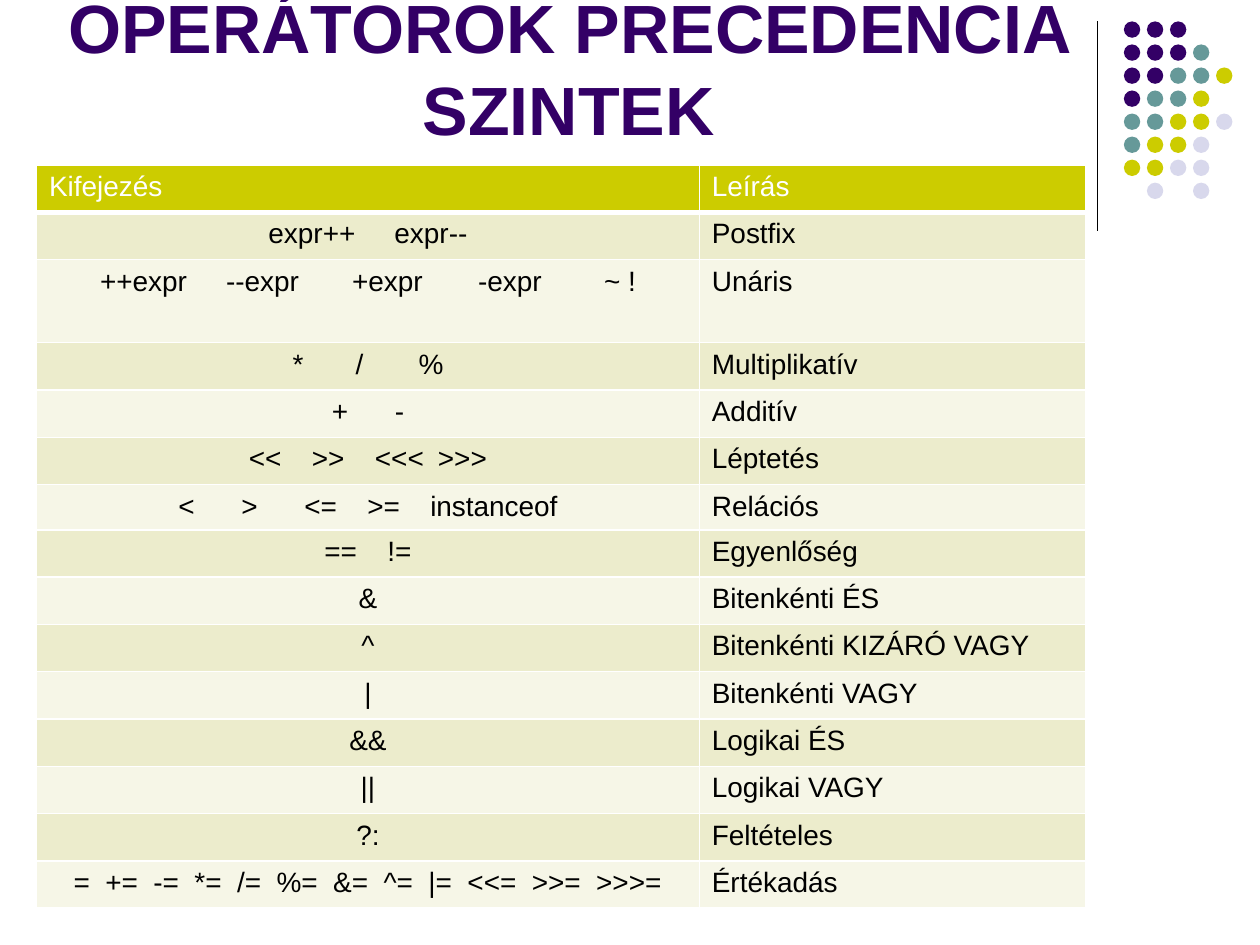
from lxml.etree import SubElement
from pptx import Presentation
from pptx.dml.color import RGBColor
from pptx.enum.shapes import MSO_CONNECTOR, MSO_SHAPE
from pptx.enum.text import MSO_ANCHOR, MSO_AUTO_SIZE, PP_ALIGN
from pptx.oxml.ns import qn
from pptx.util import Inches, Pt

FONT = "Arial"
PURPLE, TEAL, LIME, LAVENDER = "330066", "669999", "CCCC00", "D8D8EC"
WHITE, BLACK = "FFFFFF", "000000"
BANDS = ["ECECCC", "F6F6E7"]

TITLE = "OPERÁTOROK PRECEDENCIA SZINTEK"
HEADER = ("Kifejezés", "Leírás")
LEVELS = [
    ("expr++\texpr--", "Postfix"),
    ("++expr\t--expr\t+expr\t-expr\t~ !", "Unáris"),
    ("*\t/\t%", "Multiplikatív"),
    ("+\t-", "Additív"),
    ("<<\t>>\t<<<\t>>>", "Léptetés"),
    ("<\t>\t<=\t>=\tinstanceof", "Relációs"),
    ("==\t!=", "Egyenlőség"),
    ("&", "Bitenkénti ÉS"),
    ("^", "Bitenkénti KIZÁRÓ VAGY"),
    ("|", "Bitenkénti VAGY"),
    ("&&", "Logikai ÉS"),
    ("||", "Logikai VAGY"),
    ("?:", "Feltételes"),
    ("=  +=  -=  *=  /=  %=  &=  ^=  |=  <<=  >>=  >>>=", "Értékadás"),
]
COLUMN_WIDTHS = [5.26, 3.07]
TABLE_HEIGHT = 5.9
SPECIAL_HEIGHTS = {2: 0.66, 6: 0.36}

DOT_COLORS = {"P": PURPLE, "T": TEAL, "L": LIME, "V": LAVENDER}
DOT_ROWS = ["PPP", "PPPT", "PPTTL", "PTTL", "TTLLV", "TLLV", "LLVV", ".V.V"]
DOT_LEFT, DOT_TOP, DOT_SIZE = 8.92, 0.17, 0.13
DOT_PITCH = 1.28 / 7


def color(hex_string):
    return RGBColor.from_string(hex_string)


def add_run(paragraph, text, size, hex_string, bold=False):
    run = paragraph.add_run()
    run.text = text
    run.font.name = FONT
    run.font.size = Pt(size)
    run.font.bold = bold
    run.font.color.rgb = color(hex_string)


def set_borders(cell, bottom=1):
    """Draw white borders; they must precede the fill in the cell's XML."""
    properties = cell._tc.get_or_add_tcPr()
    for side, width in (("L", 1), ("R", 1), ("T", 1), ("B", bottom)):
        line = SubElement(properties, qn(f"a:ln{side}"), w=str(Pt(width)))
        fill = SubElement(line, qn("a:solidFill"))
        SubElement(fill, qn("a:srgbClr"), val=WHITE)


def add_divider(slide):
    divider = slide.shapes.add_connector(
        MSO_CONNECTOR.STRAIGHT, Inches(8.71), Inches(0.17), Inches(8.71), Inches(1.83))
    divider.line.color.rgb = color(BLACK)
    divider.line.width = Pt(0.75)
    SubElement(divider._element.spPr, qn("a:effectLst"))


def add_dots(slide):
    group = slide.shapes.add_group_shape()
    for row, letters in enumerate(DOT_ROWS):
        for column, letter in enumerate(letters):
            if letter not in DOT_COLORS:
                continue
            dot = group.shapes.add_shape(
                MSO_SHAPE.OVAL,
                Inches(DOT_LEFT + column * DOT_PITCH), Inches(DOT_TOP + row * DOT_PITCH),
                Inches(DOT_SIZE), Inches(DOT_SIZE))
            dot.shadow.inherit = False
            dot.fill.solid()
            dot.fill.fore_color.rgb = color(DOT_COLORS[letter])
            dot.line.fill.background()


def fill_title(slide):
    title = slide.shapes.title
    title.left, title.top = Inches(0.28), Inches(0.44)
    title.width, title.height = Inches(8.47), Inches(0.79)
    frame = title.text_frame
    frame.auto_size = MSO_AUTO_SIZE.NONE
    frame.word_wrap = True
    frame.vertical_anchor = MSO_ANCHOR.BOTTOM
    frame.paragraphs[0].alignment = PP_ALIGN.CENTER
    add_run(frame.paragraphs[0], TITLE, 39, PURPLE, bold=True)


def add_level_table(slide):
    rows = [HEADER] + LEVELS
    table = slide.shapes.add_table(
        len(rows), len(HEADER), Inches(0.29), Inches(1.31),
        Inches(sum(COLUMN_WIDTHS)), Inches(TABLE_HEIGHT)).table
    table.horz_banding = False
    for column, width in zip(table.columns, COLUMN_WIDTHS):
        column.width = Inches(width)
    regular_height = ((TABLE_HEIGHT - sum(SPECIAL_HEIGHTS.values()))
                      / (len(rows) - len(SPECIAL_HEIGHTS)))
    for row, texts in enumerate(rows):
        is_header = row == 0
        table.rows[row].height = Inches(SPECIAL_HEIGHTS.get(row, regular_height))
        for column, text in enumerate(texts):
            cell = table.cell(row, column)
            set_borders(cell, bottom=3 if is_header else 1)
            cell.fill.solid()
            cell.fill.fore_color.rgb = color(LIME if is_header else BANDS[(row - 1) % 2])
            paragraph = cell.text_frame.paragraphs[0]
            if column == 0 and not is_header:
                paragraph.alignment = PP_ALIGN.CENTER
            add_run(paragraph, text, 16, WHITE if is_header else BLACK)


def main():
    presentation = Presentation()
    presentation.slide_width, presentation.slide_height = Inches(10), Inches(7.5)
    slide = presentation.slides.add_slide(presentation.slide_layouts[5])
    add_divider(slide)
    add_dots(slide)
    fill_title(slide)
    add_level_table(slide)
    presentation.save("out.pptx")


if __name__ == "__main__":
    main()
